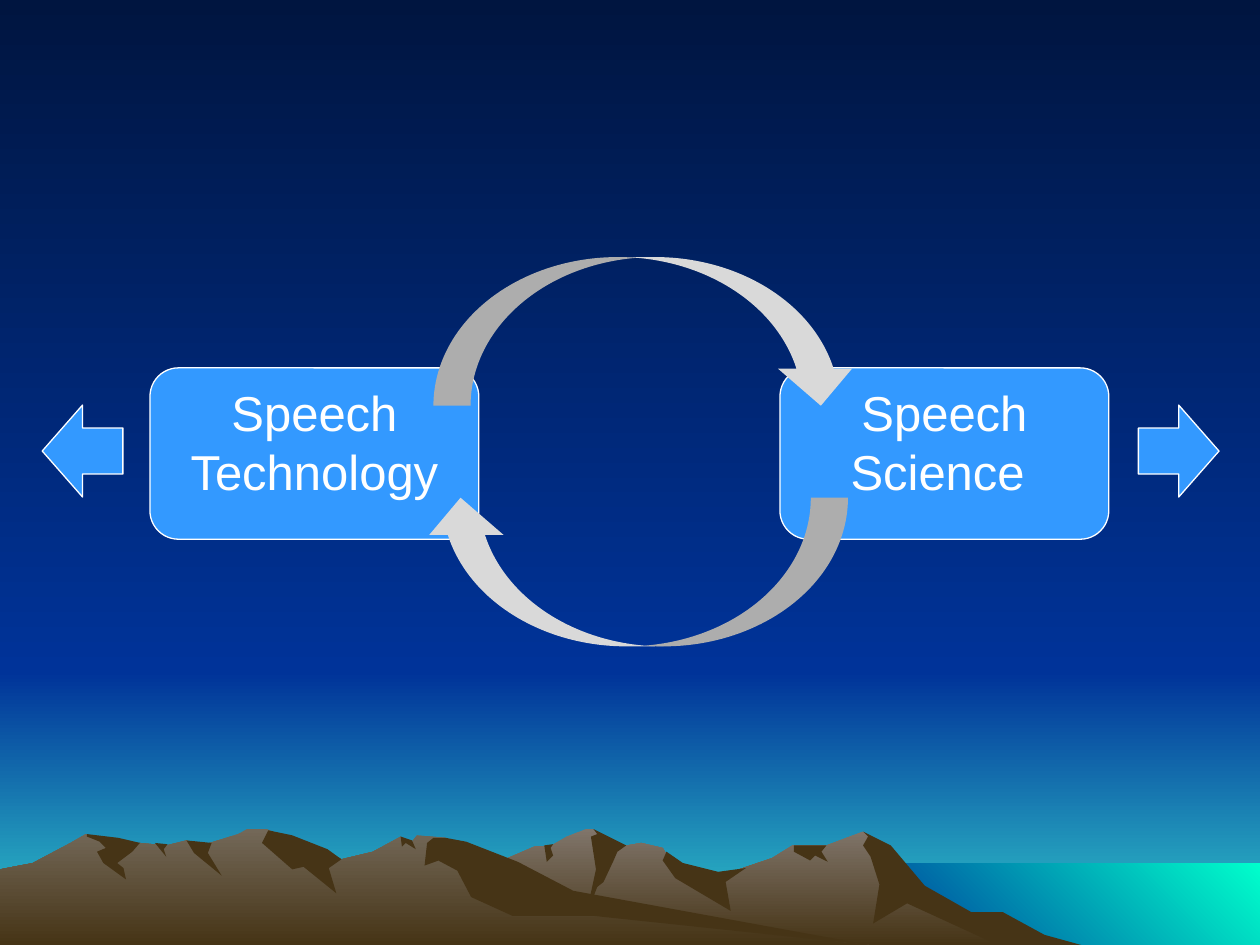
from pptx import Presentation
from pptx.dml.color import RGBColor
from pptx.enum.shapes import MSO_SHAPE as SHAPE
from pptx.enum.text import MSO_ANCHOR as ANCHOR, PP_ALIGN as ALIGN
from pptx.util import Inches, Pt

THEME = {
    "night": "001540", "blue": "003399", "horizon": "33CCCC", "sea": "00FFCC",
    "rock": "80756A", "pale_rock": "736858", "earth": "463416",
    "box": "3399FF", "arrow": "D9D9D9", "white": "FFFFFF",
    "font": "Arial", "size": Pt(28), "line": Pt(0.75),
}
WIDTH, HEIGHT = 10, 7.5
HORIZON, SHORE, SHORE_LEFT = 5.33, 6.85, 6.83
DOWNWARD, DIAGONAL = 270, 45
UNITS = 100


def style(sp, colours, angle=DOWNWARD, outline=None):
    sp.shadow.inherit = False
    rgbs = [RGBColor.from_string(THEME[c]) for c in colours]
    if len(rgbs) == 1:
        sp.fill.solid()
        sp.fill.fore_color.rgb = rgbs[0]
    else:
        sp.fill.gradient()
        sp.fill.gradient_angle = angle
        for stop, rgb in zip(sp.fill.gradient_stops, rgbs):
            stop.color.rgb = rgb
    if outline:
        sp.line.color.rgb = RGBColor.from_string(THEME[outline])
        sp.line.width = THEME["line"]
    else:
        sp.line.fill.background()


def add_outline(points, colours, angle=DOWNWARD):
    grid = [(round(x * UNITS), round(y * UNITS)) for x, y in points]
    builder = s.shapes.build_freeform(*grid[0], scale=Inches(1) / UNITS)
    builder.add_line_segments(grid[1:], close=True)
    style(builder.convert_to_shape(), colours, angle)


prs = Presentation()
prs.slide_width, prs.slide_height = Inches(WIDTH), Inches(HEIGHT)
s = prs.slides.add_slide(prs.slide_layouts[6])
background = s.background.fill
background.gradient()
background.gradient_angle = DOWNWARD
for stop, colour in zip(background.gradient_stops, ["night", "blue"]):
    stop.color.rgb = RGBColor.from_string(THEME[colour])

bands = [
    (0, HORIZON, HEIGHT, ["blue", "horizon"], DOWNWARD),
    (0, 0, HORIZON, ["night", "blue"], DOWNWARD),
    (SHORE_LEFT, SHORE, HEIGHT, ["blue", "sea"], DIAGONAL),
]
for left, top, bottom, colours, angle in bands:
    corners = [(left, top), (WIDTH, top), (WIDTH, bottom), (left, bottom)]
    add_outline(corners, colours, angle)

right_range = {
    "colour": "rock",
    "base": (2.58, 8.21),
    "skyline": [
        (2.77, 7.39), (3.27, 7.09), (3.94, 6.85), (4.24, 6.72), (4.38, 6.71),
        (4.5, 6.64), (4.65, 6.58), (4.71, 6.58), (4.86, 6.73), (5.09, 6.69),
        (5.26, 6.73), (5.36, 6.9), (5.66, 6.97), (6.13, 6.81), (6.29, 6.71),
        (6.56, 6.71), (6.85, 6.6), (7.02, 6.71), (7.23, 6.98), (7.64, 7.23),
        (8.02, 7.4)],
    "shadows": {
        "east slope": [
            (6.85, 6.6), (6.89, 6.64), (6.85, 6.71), (6.91, 6.8), (6.98, 7.02),
            (6.93, 7.33), (7.2, 7.17), (7.92, 7.5), (8.58, 7.5), (8.29, 7.42),
            (7.96, 7.24), (7.71, 7.24), (7.34, 7.03), (7.07, 6.71)],
        "main peak": [
            (4.71, 6.58), (4.74, 6.62), (4.69, 6.64), (4.73, 6.9), (4.65, 7.27),
            (4.74, 7.04), (4.79, 7), (4.87, 6.83), (4.9, 6.76), (4.97, 6.71)],
        "middle slope": [
            (5.29, 6.76), (5.26, 6.83), (5.36, 6.97), (5.8, 7.23), (5.76, 7),
            (5.92, 6.89), (5.7, 6.92), (5.42, 6.85)],
        "east notch": [
            (6.3, 6.71), (6.3, 6.76), (6.43, 6.83), (6.47, 6.79), (6.57, 6.84),
            (6.52, 6.76), (6.56, 6.71)],
        "west notch": [
            (4.32, 6.71), (4.39, 6.7), (4.37, 6.73), (4.39, 6.79), (4.34, 6.84)],
    },
}
left_range = {
    "colour": "pale_rock",
    "base": (0, 6.9),
    "skyline": [
        (0, 6.9), (0.26, 6.85), (0.56, 6.69), (0.68, 6.62), (0.94, 6.71),
        (1.11, 6.69), (1.32, 6.71), (1.48, 6.67), (1.6, 6.71), (1.89, 6.62),
        (1.96, 6.58), (2.12, 6.58), (2.23, 6.63), (2.36, 6.81), (2.6, 6.76),
        (2.71, 6.82), (2.96, 6.76), (3.18, 6.64), (3.27, 6.68), (3.31, 6.63),
        (3.54, 6.65), (4.32, 7.12), (6.67, 7.48)],
    "shadows": {
        "summit slope": [
            (2.13, 6.59), (2.08, 6.69), (2.32, 6.9), (2.41, 6.88), (2.67, 7.09),
            (2.61, 6.89), (2.71, 6.82), (2.6, 6.74), (2.32, 6.63)],
        "long spur": [
            (3.54, 6.65), (3.44, 6.65), (3.39, 6.69), (3.37, 6.87), (3.48, 6.83),
            (3.63, 6.91), (3.74, 7.12), (4.07, 7.27), (4.72, 7.27), (6.9, 7.5),
            (4.55, 7.07), (4.11, 6.84), (3.7, 6.68)],
        "saddle": [
            (3.18, 6.64), (3.27, 6.67), (3.3, 6.74), (3.22, 6.69), (3.19, 6.72)],
        "middle gully": [
            (1.48, 6.67), (1.68, 6.69), (1.65, 6.77), (1.76, 6.95), (1.54, 6.77)],
        "small gully": [(1.23, 6.69), (1.33, 6.7), (1.3, 6.74), (1.32, 6.8)],
        "west slope": [
            (0.69, 6.62), (0.94, 6.65), (1.11, 6.69), (1.05, 6.76), (0.93, 6.85),
            (0.98, 6.89), (1, 6.98), (0.82, 6.85), (0.77, 6.76), (0.84, 6.73),
            (0.79, 6.68), (0.69, 6.64)],
    },
}
for mountains in [right_range, left_range]:
    west, east = mountains["base"]
    ridge = [(west, HEIGHT), *mountains["skyline"], (east, HEIGHT)]
    add_outline(ridge, [mountains["colour"], "earth"])
    for shadow in mountains["shadows"].values():
        add_outline(shadow, ["earth"])

for left, label in [(1.19, "Speech Technology"), (6.19, "Speech Science ")]:
    sp = s.shapes.add_shape(SHAPE.FLOWCHART_ALTERNATE_PROCESS,
                            *map(Inches, (left, 2.92, 2.61, 1.36)))
    style(sp, ["box"], outline="white")
    tf = sp.text_frame
    tf.word_wrap = True
    tf.vertical_anchor = ANCHOR.TOP
    p = tf.paragraphs[0]
    p.alignment = ALIGN.CENTER
    r = p.add_run()
    r.text = label
    for name, value in {"name": THEME["font"], "size": THEME["size"]}.items():
        setattr(r.font, name, value)
    r.font.color.rgb = RGBColor.from_string(THEME["white"])

outward = (SHAPE.DOWN_ARROW, 0.73, 0.64, "box", "white")
cycle = (SHAPE.CURVED_DOWN_ARROW, 3.37, 1.18, "arrow", None)
arrows = [
    (outward, 8.99, 3.26, 270),
    (outward, 0.29, 3.26, 90),
    (cycle, 3.44, 2.04, 0),
    (cycle, 3.36, 3.95, 180),
]
for (kind, width, height, colour, outline), left, top, rotation in arrows:
    sp = s.shapes.add_shape(kind, *map(Inches, (left, top, width, height)))
    sp.rotation = rotation
    style(sp, [colour], outline=outline)

prs.save("out.pptx")
